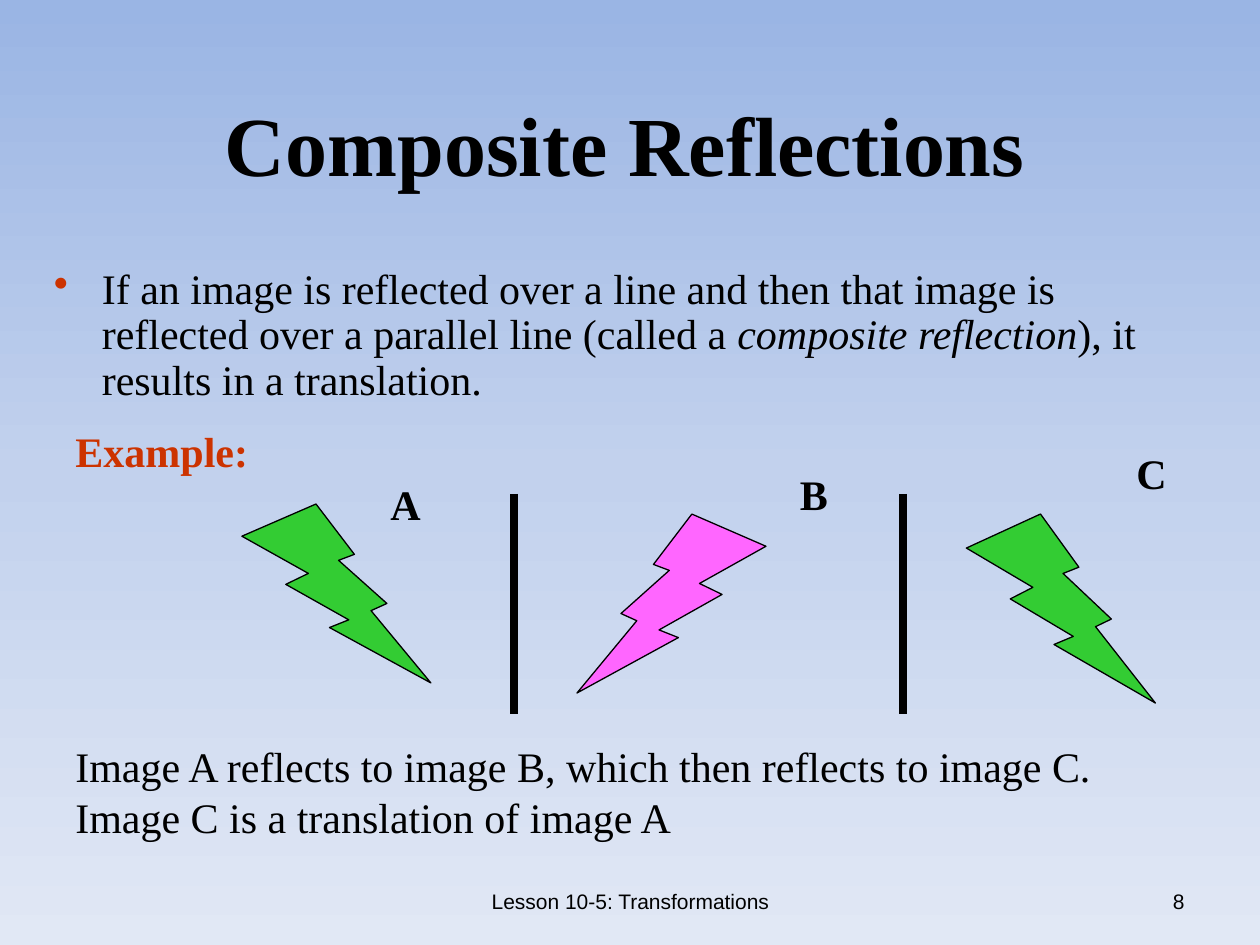
from copy import deepcopy

from lxml.etree import SubElement
from pptx import Presentation
from pptx.dml.color import RGBColor
from pptx.enum.shapes import MSO_CONNECTOR as Link, MSO_SHAPE as Shape
from pptx.enum.text import MSO_ANCHOR as Anchor, MSO_AUTO_SIZE as Fit, PP_ALIGN as Align
from pptx.oxml.ns import qn
from pptx.util import Inches, Pt

BLACK = RGBColor(0x00, 0x00, 0x00)
RED = RGBColor(0xCC, 0x33, 0x00)
GREEN = RGBColor(0x33, 0xCC, 0x33)
PINK = RGBColor(0xFF, 0x66, 0xFF)
SKY = (RGBColor(0x9A, 0xB5, 0xE4), RGBColor(0xC2, 0xD1, 0xED), RGBColor(0xE1, 0xE8, 0xF5))
SERIF, SANS = "Times New Roman", "Arial"


def paint_sky(slide):
    fill = slide.background.fill
    fill.gradient()
    fill.gradient_angle = 270
    stops = slide.element.find(".//" + qn("a:gsLst"))
    stops.insert(1, deepcopy(stops[0]))
    for i, (stop, color) in enumerate(zip(fill.gradient_stops, SKY)):
        stop.position = i / 2
        stop.color.rgb = color


def add_text(slide, box, runs, size=24, font=SERIF, color=BLACK, bold=False,
             align=Align.LEFT, anchor=Anchor.TOP, fit=Fit.NONE):
    """Place one paragraph of (text, italic) runs and return it."""
    frame = slide.shapes.add_textbox(*map(Inches, box)).text_frame
    frame.word_wrap = True
    frame.auto_size = fit
    frame.vertical_anchor = anchor
    para = frame.paragraphs[0]
    para.alignment = align
    for text, italic in runs:
        run = para.add_run()
        run.text = text
        run.font.size = Pt(size)
        run.font.name = font
        run.font.bold = bold
        run.font.italic = italic
        run.font.color.rgb = color
    return para


def set_gap(para, percent):
    """Set the space before as a share of the line height."""
    gap = SubElement(para._p.get_or_add_pPr(), qn("a:spcBef"))
    SubElement(gap, qn("a:spcPct"), val=str(percent * 1000))


def add_bullet(para, color):
    props = para._p.get_or_add_pPr()
    props.set("marL", str(Inches(0.38)))
    props.set("indent", str(Inches(-0.38)))
    tint = SubElement(props, qn("a:buClr"))
    SubElement(tint, qn("a:srgbClr"), val=str(color))
    SubElement(props, qn("a:buChar"), char="•")


def add_note(slide, box, text, **style):
    para = add_text(slide, box, [(text, False)], fit=Fit.SHAPE_TO_FIT_TEXT, **style)
    set_gap(para, 50)


def add_bolt(slide, left, top, height, color, flip=False):
    bolt = slide.shapes.add_shape(Shape.LIGHTNING_BOLT, Inches(left), Inches(top),
                                  Inches(1.5), Inches(height))
    bolt.shadow.inherit = False
    bolt.fill.solid()
    bolt.fill.fore_color.rgb = color
    bolt.line.color.rgb = BLACK
    bolt.line.width = Pt(0.75)
    if flip:
        bolt.element.spPr.xfrm.set("flipH", "1")


def add_mirror(slide, x):
    line = slide.shapes.add_connector(Link.STRAIGHT, Inches(x), Inches(3.92),
                                      Inches(x), Inches(5.67))
    line.line.color.rgb = BLACK
    line.line.width = Pt(4.5)
    SubElement(line.element.spPr, qn("a:effectLst"))


def add_footer(slide, left, width, text, align):
    add_text(slide, (left, 6.95, width, 0.4), [(text, False)], size=12, font=SANS,
             align=align, anchor=Anchor.MIDDLE)


def main():
    deck = Presentation()
    deck.slide_width, deck.slide_height = Inches(10), Inches(7.5)
    slide = deck.slides.add_slide(deck.slide_layouts[6])
    paint_sky(slide)

    add_footer(slide, 3.42, 3.17, "Lesson 10-5: Transformations", Align.CENTER)
    add_footer(slide, 7.17, 2.33, "8", Align.RIGHT)
    add_text(slide, (0.75, 0.67, 8.42, 0.92), [("Composite Reflections", False)],
             size=48, bold=True, align=Align.CENTER, anchor=Anchor.MIDDLE)

    rule = add_text(slide, (0.33, 2.08, 9.25, 1.25), [
        ("If an image is reflected over a line and then that image is "
         "reflected over a parallel line (called a ", False),
        ("composite reflection", True),
        ("), it results in a translation.", False),
    ])
    rule.line_spacing = 0.9
    set_gap(rule, 20)
    add_bullet(rule, RED)

    add_bolt(slide, 1.92, 4, 1.42, GREEN)
    for x in (4.08, 7.17):
        add_mirror(slide, x)
    add_bolt(slide, 7.67, 4.08, 1.5, GREEN)
    add_bolt(slide, 4.58, 4.08, 1.42, PINK, flip=True)

    for name, left, top, width in (("A", 3, 3.75, 0.67), ("B", 6.25, 3.67, 0.42),
                                   ("C", 8.92, 3.5, 0.5)):
        add_note(slide, (left, top, width, 0.5), name, bold=True)
    add_note(slide, (0.5, 5.83, 8.92, 0.9),
             "Image A reflects to image B, which then reflects to image C. "
             "Image C is a translation of image A")
    add_note(slide, (0.5, 3.33, 1.75, 0.5), "Example:", color=RED, bold=True)

    deck.save("out.pptx")


if __name__ == "__main__":
    main()
